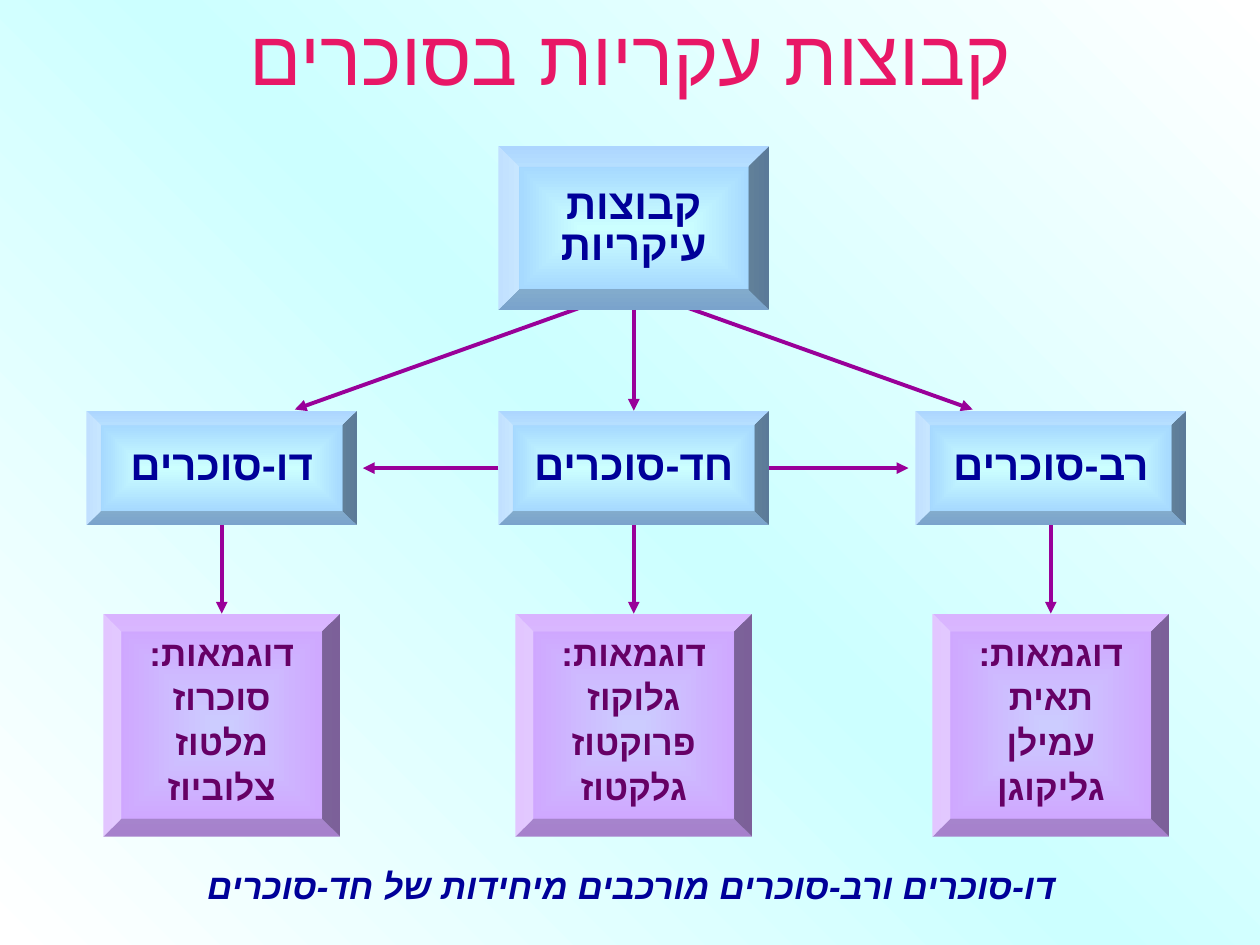
from copy import deepcopy
from dataclasses import dataclass

from lxml.etree import SubElement
from pptx import Presentation
from pptx.dml.color import RGBColor
from pptx.enum.shapes import MSO_CONNECTOR, MSO_SHAPE
from pptx.enum.text import MSO_ANCHOR, MSO_AUTO_SIZE, PP_ALIGN
from pptx.oxml.ns import qn
from pptx.util import Inches, Pt

WHITE = RGBColor(0xFF, 0xFF, 0xFF)
PALE_CYAN = RGBColor(0xCC, 0xFF, 0xFF)
SKY = RGBColor(0x99, 0xCC, 0xFF)
LAVENDER = RGBColor(0xCC, 0xCC, 0xFF)
LILAC = RGBColor(0xD0, 0xA1, 0xFF)
NAVY = RGBColor(0x00, 0x00, 0x99)
PLUM = RGBColor(0x66, 0x00, 0x66)
PURPLE = RGBColor(0x99, 0x00, 0x99)
PINK = RGBColor(0xE8, 0x17, 0x66)
TOP, LEFT, BOTTOM, RIGHT = range(4)


@dataclass(frozen=True)
class BoxStyle:
    width: float
    bevel: float
    inner: RGBColor
    outer: RGBColor
    text: RGBColor
    size: int
    spacing: float


@dataclass(frozen=True)
class SugarGroup:
    center: float
    name: str
    examples: tuple[str, ...]


GROUP_STYLE = BoxStyle(2.15, 0.125, PALE_CYAN, SKY, NAVY, 24, 0.8)
EXAMPLE_STYLE = BoxStyle(1.88, 0.08, LAVENDER, LILAC, PLUM, 20, 0.65)
DI = SugarGroup(1.76, "דו-סוכרים", ("סוכרוז", "מלטוז", "צלוביוז"))
MONO = SugarGroup(5.03, "חד-סוכרים", ("גלוקוז", "פרוקטוז", "גלקטוז"))
POLY = SugarGroup(8.34, "רב-סוכרים", ("תאית", "עמילן", "גליקוגן"))


def add_text(s, lines, left, top, width, height, size, color,
             spacing=1.0, before=0.5, bold=True, italic=False):
    sp = s.shapes.add_textbox(Inches(left), Inches(top), Inches(width), Inches(height))
    tf = sp.text_frame
    frame = {"word_wrap": True, "vertical_anchor": MSO_ANCHOR.MIDDLE,
             "auto_size": MSO_AUTO_SIZE.NONE}
    for name, value in frame.items():
        setattr(tf, name, value)
    para = {"alignment": PP_ALIGN.CENTER, "line_spacing": spacing,
            "space_before": Pt(size * before)}
    font = {"name": "Arial", "size": Pt(size), "bold": bold, "italic": italic}
    for i, line in enumerate(lines):
        p = tf.add_paragraph() if i else tf.paragraphs[0]
        for name, value in para.items():
            setattr(p, name, value)
        p._p.get_or_add_pPr().set("rtl", "1")
        r = p.add_run()
        r.text = line
        for name, value in font.items():
            setattr(r.font, name, value)
        r.font.color.rgb = color
        SubElement(r._r.get_or_add_rPr(), qn("a:cs"), typeface="Arial")
    return sp


def add_box(s, lines: tuple[str, ...], center: float, top: float, height: float,
            text_height: float, style: BoxStyle):
    sp = s.shapes.add_shape(MSO_SHAPE.BEVEL, Inches(center - style.width / 2),
                            Inches(top), Inches(style.width), Inches(height))
    sp.adjustments[0] = style.bevel
    sp.shadow.inherit = False
    sp.line.fill.background()
    sp.fill.gradient()
    for stop, color in zip(sp.fill.gradient_stops, (style.inner, style.outer)):
        stop.color.rgb = color
    grad = sp._element.spPr.find(qn("a:gradFill"))
    grad.remove(grad.find(qn("a:lin")))
    rect = SubElement(grad, qn("a:path"), path="rect")
    SubElement(rect, qn("a:fillToRect"), l="50000", t="50000", r="50000", b="50000")
    add_text(s, lines, center - 1.83 / 2, top + (height - text_height) / 2,
             1.83, text_height, style.size, style.text, style.spacing)
    return sp


def add_arrow(s, x1: float, y1: float, x2: float, y2: float):
    c = s.shapes.add_connector(MSO_CONNECTOR.STRAIGHT, Inches(x1), Inches(y1),
                               Inches(x2), Inches(y2))
    c.line.color.rgb = PURPLE
    c.line.width = Pt(2.25)
    SubElement(c.line._get_or_add_ln(), qn("a:tailEnd"), type="triangle")
    SubElement(c._element.spPr, qn("a:effectLst"))
    return c


def join(s, upper, lower) -> None:
    c = add_arrow(s, 0, 0, 1, 1)
    c.begin_connect(upper, BOTTOM)
    c.end_connect(lower, TOP)


def paint_background(s) -> None:
    fill = s.background.fill
    fill.gradient()
    fill.gradient_angle = 45
    stops = next(s._element.iter(qn("a:gsLst")))
    stops.insert(1, deepcopy(stops[0]))
    for i, (stop, color) in enumerate(zip(fill.gradient_stops, (WHITE, PALE_CYAN, WHITE))):
        stop.position = i / 2
        stop.color.rgb = color


def main() -> None:
    prs = Presentation()
    prs.slide_width, prs.slide_height = Inches(10), Inches(7.5)
    s = prs.slides.add_slide(prs.slide_layouts[6])
    paint_background(s)

    for side in (1, -1):
        add_arrow(s, MONO.center, 2.29, MONO.center + side * 2.69, 3.25)
    root = add_box(s, ("קבוצות עיקריות",), MONO.center, 1.16, 1.3, 0.74, GROUP_STYLE)

    for group in (DI, MONO, POLY):
        box = add_box(s, (group.name,), group.center, 3.26, 0.91, 0.42, GROUP_STYLE)
        examples = add_box(s, ("דוגמאות:", *group.examples), group.center,
                           4.87, 1.77, 1.47, EXAMPLE_STYLE)
        join(s, box, examples)
        if group is MONO:
            join(s, root, box)
            for site, end in ((LEFT, 2.88), (RIGHT, 7.21)):
                c = add_arrow(s, MONO.center, 3.715, end, 3.715)
                c.begin_connect(box, site)

    add_text(s, ("דו-סוכרים ורב-סוכרים מורכבים מיחידות של חד-סוכרים",),
             0.4, 6.81, 9.22, 0.43, 20, NAVY, italic=True)
    add_text(s, ("קבוצות עקריות בסוכרים",), 0.76, 0.02, 8.5, 0.83, 44, PINK,
             before=0, bold=False)
    prs.save("out.pptx")


if __name__ == "__main__":
    main()
